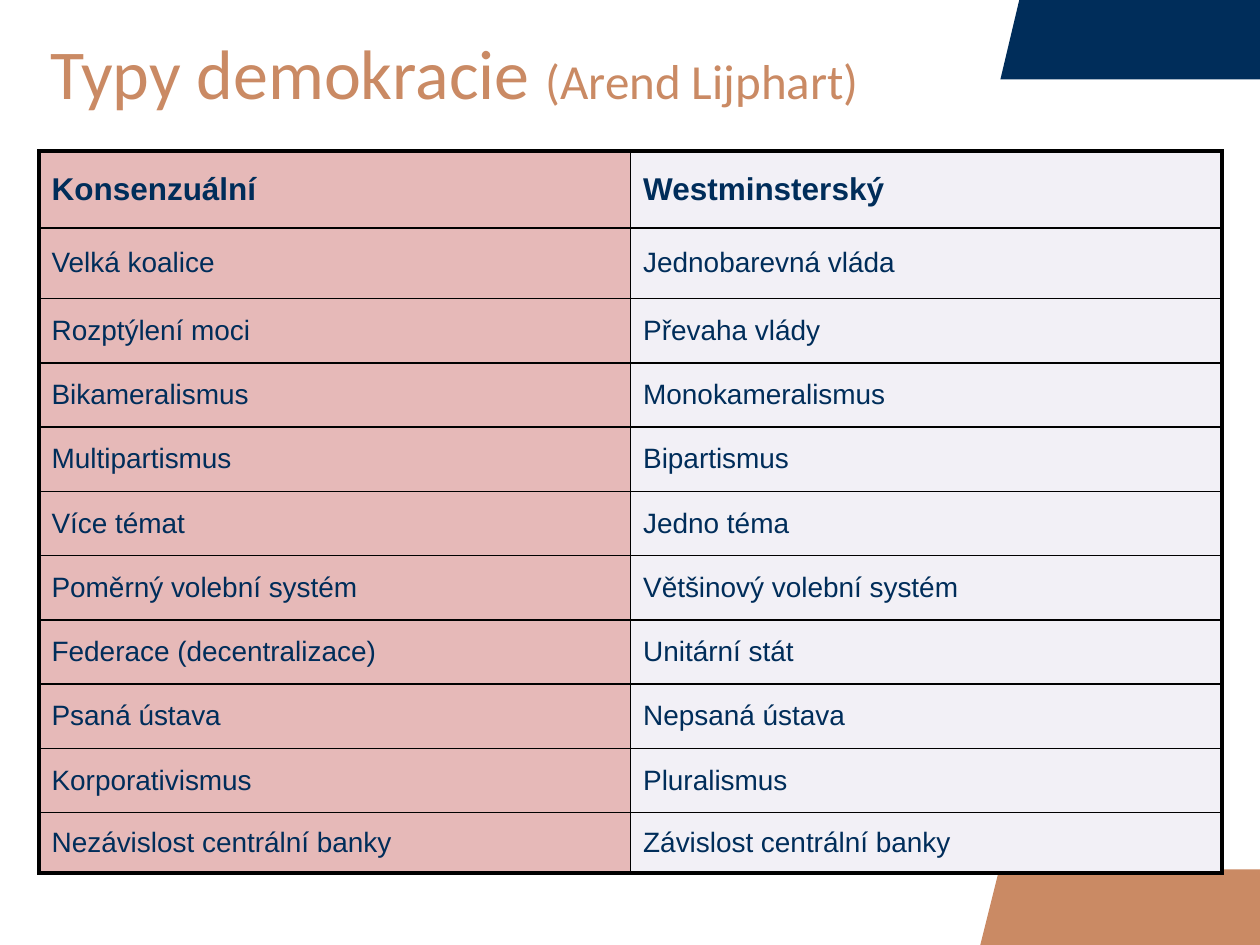
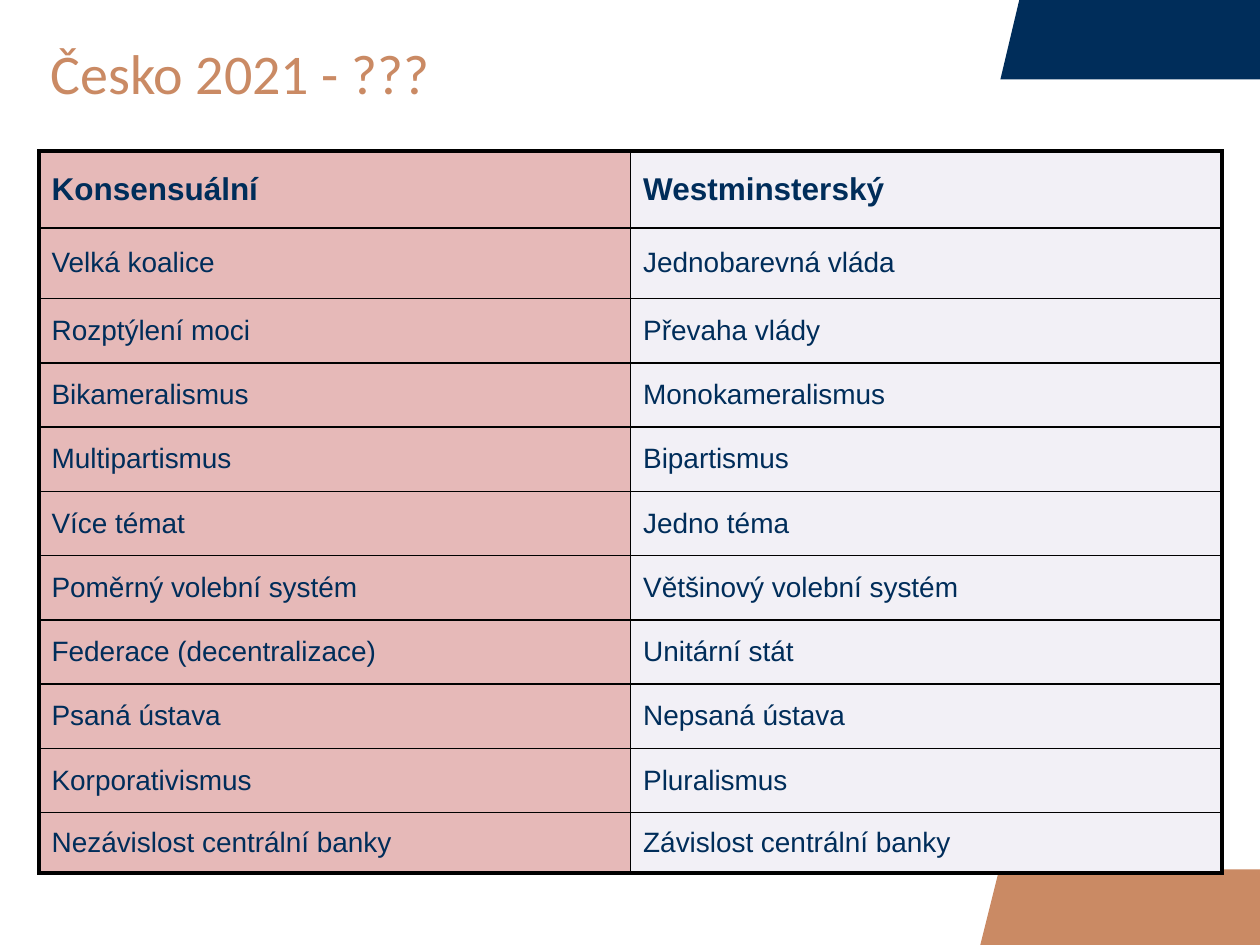
from collections import namedtuple
from dataclasses import dataclass

from lxml import etree
from pptx import Presentation
from pptx import util as u
from pptx.dml import color
from pptx.enum import text
from pptx.oxml import ns

Box = namedtuple("Box", "left top width height")


@dataclass(frozen=True)
class Theme:
    navy: str = "002D5A"
    copper: str = "CA8A64"
    rose: str = "E6B9B8"
    lavender: str = "F2F0F6"
    border: str = "000000"
    title_font: str = "Calibri"
    table_font: str = "Arial"
    title_size: int = 40
    short_title_size: int = 32
    author_size: int = 28
    header_size: int = 18
    row_size: int = 16
    outer_line: float = 2.25
    inner_line: float = 1


THEME = Theme()
SLIDE_SIZE = u.Inches(10), u.Inches(7.5)
TOP_BAND = Box(7.94, 0, 2.06, 0.63)
BOTTOM_BAND = Box(7.78, 6.9, 2.22, 0.6)
BAND_SLANT = 0.15
TITLE_BOX = Box(0.12, 0.18, 9.24, 0.78)
TABLE_BOX = Box(0.31, 1.2, 9.39, 5.73)
ROW_HEIGHTS = [0.61, 0.56] + [0.51] * 8 + [0.48]

FEATURES = [
    ("Velká koalice", "Jednobarevná vláda"),
    ("Rozptýlení moci", "Převaha vlády"),
    ("Bikameralismus", "Monokameralismus"),
    ("Multipartismus", "Bipartismus"),
    ("Více témat", "Jedno téma"),
    ("Poměrný volební systém", "Většinový volební systém"),
    ("Federace (decentralizace)", "Unitární stát"),
    ("Psaná ústava", "Nepsaná ústava"),
    ("Korporativismus", "Pluralismus"),
    ("Nezávislost centrální banky", "Závislost centrální banky"),
]

SLIDES = [
    ([("Typy demokracie ", THEME.title_size),
      ("(Arend Lijphart)", THEME.author_size)], "Konsenzuální"),
    ([("Česko 2021 - ???", THEME.short_title_size)], "Konsensuální"),
]


def rgb(value):
    return color.RGBColor.from_string(value)


def style_font(font, name, size, ink, bold=False):
    font.name = name
    font.size = u.Pt(size)
    font.bold = bold
    font.color.rgb = rgb(ink)


def add_band(slide, box, fill):
    right, bottom = box.left + box.width, box.top + box.height
    corners = [(box.left + BAND_SLANT, box.top), (right, box.top), (right, bottom)]
    outline = slide.shapes.build_freeform(u.Inches(box.left), u.Inches(bottom))
    outline.add_line_segments([(u.Inches(x), u.Inches(y)) for x, y in corners])
    band = outline.convert_to_shape()
    band.shadow.inherit = False
    band.fill.solid()
    band.fill.fore_color.rgb = rgb(fill)
    band.line.fill.background()


def fill_title(slide, box, parts):
    title = slide.shapes.title
    title.left, title.top, title.width, title.height = map(u.Inches, box)
    frame = title.text_frame
    frame.auto_size = text.MSO_AUTO_SIZE.NONE
    frame.word_wrap = True
    frame.vertical_anchor = text.MSO_ANCHOR.MIDDLE
    frame.margin_left = frame.margin_right = u.Inches(0.28)
    heading = frame.paragraphs[0]
    heading.alignment = text.PP_ALIGN.LEFT
    for wording, size in parts:
        run = heading.add_run()
        run.text = wording
        style_font(run.font, THEME.title_font, size, THEME.copper)


def set_borders(cell, outer_sides):
    properties = cell._tc.get_or_add_tcPr()
    for position, side in enumerate("LRTB"):
        width = THEME.outer_line if side in outer_sides else THEME.inner_line
        line = etree.Element(ns.qn(f"a:ln{side}"), w=str(u.Pt(width)))
        fill = etree.SubElement(line, ns.qn("a:solidFill"))
        etree.SubElement(fill, ns.qn("a:srgbClr"), val=THEME.border)
        properties.insert(position, line)


def add_comparison(slide, box, rows):
    table = slide.shapes.add_table(len(rows), 2, *map(u.Inches, box)).table
    table.first_row = table.horz_banding = False
    for row, height in zip(table.rows, ROW_HEIGHTS):
        row.height = u.Inches(height)
    last_row = len(rows) - 1
    for r, wordings in enumerate(rows):
        for c, wording in enumerate(wordings):
            cell = table.cell(r, c)
            cell.fill.solid()
            cell.fill.fore_color.rgb = rgb((THEME.rose, THEME.lavender)[c])
            cell.vertical_anchor = text.MSO_ANCHOR.MIDDLE
            cell.text_frame.text = wording
            size = THEME.row_size if r else THEME.header_size
            run = cell.text_frame.paragraphs[0].runs[0]
            style_font(run.font, THEME.table_font, size, THEME.navy, r == 0)
            edges = {"L": c == 0, "R": c == 1, "T": r == 0, "B": r == last_row}
            set_borders(cell, [side for side, outer in edges.items() if outer])


def add_comparison_slide(deck, title_parts, consensus_label):
    slide = deck.slides.add_slide(deck.slide_layouts[5])
    add_band(slide, TOP_BAND, THEME.navy)
    add_band(slide, BOTTOM_BAND, THEME.copper)
    fill_title(slide, TITLE_BOX, title_parts)
    add_comparison(slide, TABLE_BOX, [(consensus_label, "Westminsterský")] + FEATURES)


def main():
    deck = Presentation()
    deck.slide_width, deck.slide_height = SLIDE_SIZE
    for title_parts, consensus_label in SLIDES:
        add_comparison_slide(deck, title_parts, consensus_label)
    deck.save("out.pptx")


if __name__ == "__main__":
    main()
